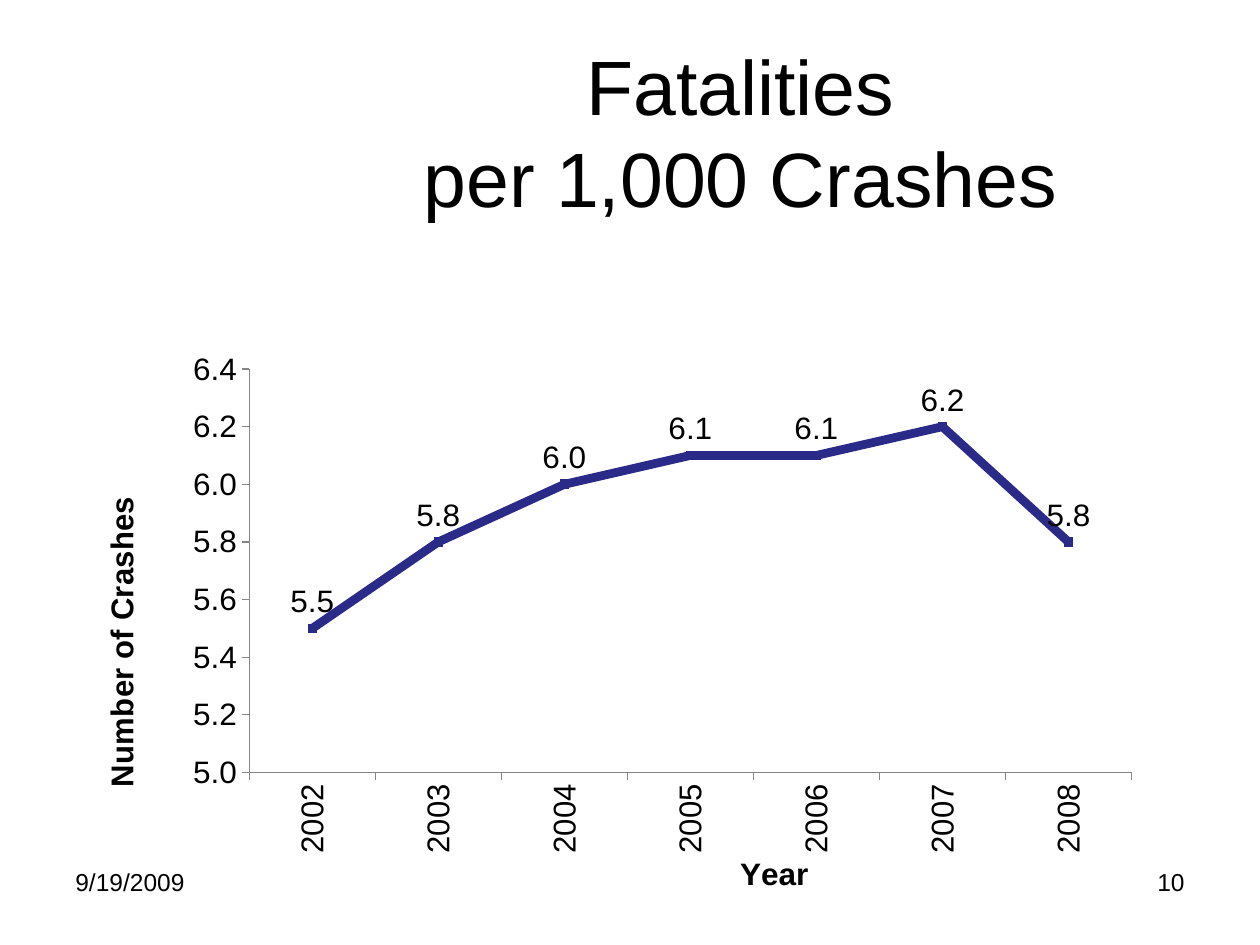
from pptx import Presentation
from pptx.chart.data import CategoryChartData
from pptx.dml.color import RGBColor
from pptx.enum.chart import XL_CHART_TYPE, XL_LABEL_POSITION, XL_MARKER_STYLE, XL_TICK_MARK
from pptx.enum.text import MSO_ANCHOR, PP_ALIGN
from pptx.oxml import parse_xml
from pptx.oxml.ns import nsdecls, qn
from pptx.util import Cm, Pt

BLACK = RGBColor(0, 0, 0)
NAVY = RGBColor(0x2A, 0x2A, 0x88)
GREY = RGBColor(0x86, 0x86, 0x86)
LEFT, CENTER, RIGHT = PP_ALIGN.LEFT, PP_ALIGN.CENTER, PP_ALIGN.RIGHT
TOP, MIDDLE = MSO_ANCHOR.TOP, MSO_ANCHOR.MIDDLE
LINE_MARKERS = XL_CHART_TYPE.LINE_MARKERS
SQUARE = XL_MARKER_STYLE.SQUARE
ABOVE = XL_LABEL_POSITION.ABOVE
OUTSIDE = XL_TICK_MARK.OUTSIDE
UPWARD = "-5400000"  # quarter turn, in 60000ths of a degree

YEARS = [str(year) for year in range(2002, 2009)]
RATES = [5.5, 5.8, 6.0, 6.1, 6.1, 6.2, 5.8]


def manual_layout(x, y, w=None, h=None):
    """Return a chart layout element; all values are fractions of the chart."""
    target = '<c:layoutTarget val="inner"/>' if w else ""
    modes = '<c:xMode val="edge"/><c:yMode val="edge"/>'
    sizes = "".join(f'<c:{tag} val="{value}"/>'
                    for tag, value in zip("xywh", (x, y, w, h)) if value)
    return parse_xml(f'<c:layout {nsdecls("c")}><c:manualLayout>{target}{modes}{sizes}'
                     '</c:manualLayout></c:layout>')


def place(element, index, layout):
    """Replace the layout of a chart part."""
    for old in element.findall(qn("c:layout")):
        element.remove(old)
    element.insert(index, layout)


class SlideBuilder:
    font_name = "Arial"

    def __init__(self, slide):
        self.slide = slide

    def style(self, font, size, bold=False):
        font.name = self.font_name
        font.size = Pt(size)
        font.bold = bold
        font.color.rgb = BLACK

    def text(self, text, x, y, w, h, size, align=LEFT, anchor=TOP, bottom=0.13):
        tf = self.slide.shapes.add_textbox(Cm(x), Cm(y), Cm(w), Cm(h)).text_frame
        tf.word_wrap = True
        tf.vertical_anchor = anchor
        tf.margin_bottom = Cm(bottom)
        tf.text = text
        p = tf.paragraphs[0]
        p.alignment = align
        for r in p.runs:
            self.style(r.font, size)

    def axis(self, axis, title, x, y, title_rotation="0", label_rotation="0"):
        axis.has_major_gridlines = False
        axis.major_tick_mark = OUTSIDE
        axis.format.line.color.rgb = GREY
        axis.format.line.width = Pt(0.75)
        self.style(axis.tick_labels.font, 18)
        axis._element.find(qn("c:txPr")).bodyPr.set("rot", label_rotation)
        tf = axis.axis_title.text_frame
        tf.text = title
        self.style(tf.paragraphs[0].runs[0].font, 18, bold=True)
        body = tf._txBody.bodyPr
        body.set("rot", title_rotation)
        body.set("vert", "horz")
        place(axis.axis_title._element, 1, manual_layout(x, y))

    def line_chart(self, categories, values, x, y, w, h):
        data = CategoryChartData(number_format="0.0")
        data.categories = categories
        data.add_series("Series 1", values)
        chart = self.slide.shapes.add_chart(
            LINE_MARKERS, Cm(x), Cm(y), Cm(w), Cm(h), data).chart
        chart.has_title = False
        chart.has_legend = False
        self.style(chart.font, 18)
        place(chart._chartSpace.chart.plotArea, 0, manual_layout(0.16, 0.17, 0.8, 0.64))

        # Axes
        self.axis(chart.category_axis, "Year", 0.6, 0.93, label_rotation=UPWARD)
        rate_axis = chart.value_axis
        self.axis(rate_axis, "Number of Crashes", 0.02, 0.37, title_rotation=UPWARD)
        rate_axis.minimum_scale, rate_axis.maximum_scale = 5, 6.4
        rate_axis.major_unit = 0.2
        rate_axis.tick_labels.number_format = "0.0"
        rate_axis.tick_labels.number_format_is_linked = False

        # Line, markers and labels
        plot = chart.plots[0]
        plot.vary_by_categories = False
        series = plot.series[0]
        series.smooth = False
        series.format.line.color.rgb = NAVY
        series.format.line.width = Pt(5)
        marker = series.marker
        marker.style = SQUARE
        marker.size = 5
        marker.format.fill.solid()
        marker.format.fill.fore_color.rgb = NAVY
        marker.format.line.color.rgb = NAVY
        labels = series.data_labels
        labels.show_value = True
        labels.position = ABOVE
        labels.number_format = "0.0"
        labels.number_format_is_linked = False
        self.style(labels.font, 18)


def main():
    prs = Presentation()
    prs.slide_width, prs.slide_height = Cm(25.4), Cm(19.05)
    s = SlideBuilder(prs.slides.add_slide(prs.slide_layouts[6]))

    # Title, raised by a deep bottom margin
    s.text("Fatalities \vper 1,000 Crashes ", 5.72, 1.9, 18.85, 3.18, 44,
           CENTER, MIDDLE, bottom=1.83)

    # Chart
    s.line_chart(YEARS, RATES, 1.47, 5.28, 22.23, 12.9)

    # Footer
    s.text("9/19/2009", 1.27, 17.35, 5.92, 1.32, 14)
    s.text("10", 18.21, 17.35, 5.92, 1.32, 14, RIGHT)

    prs.save("out.pptx")


if __name__ == "__main__":
    main()
